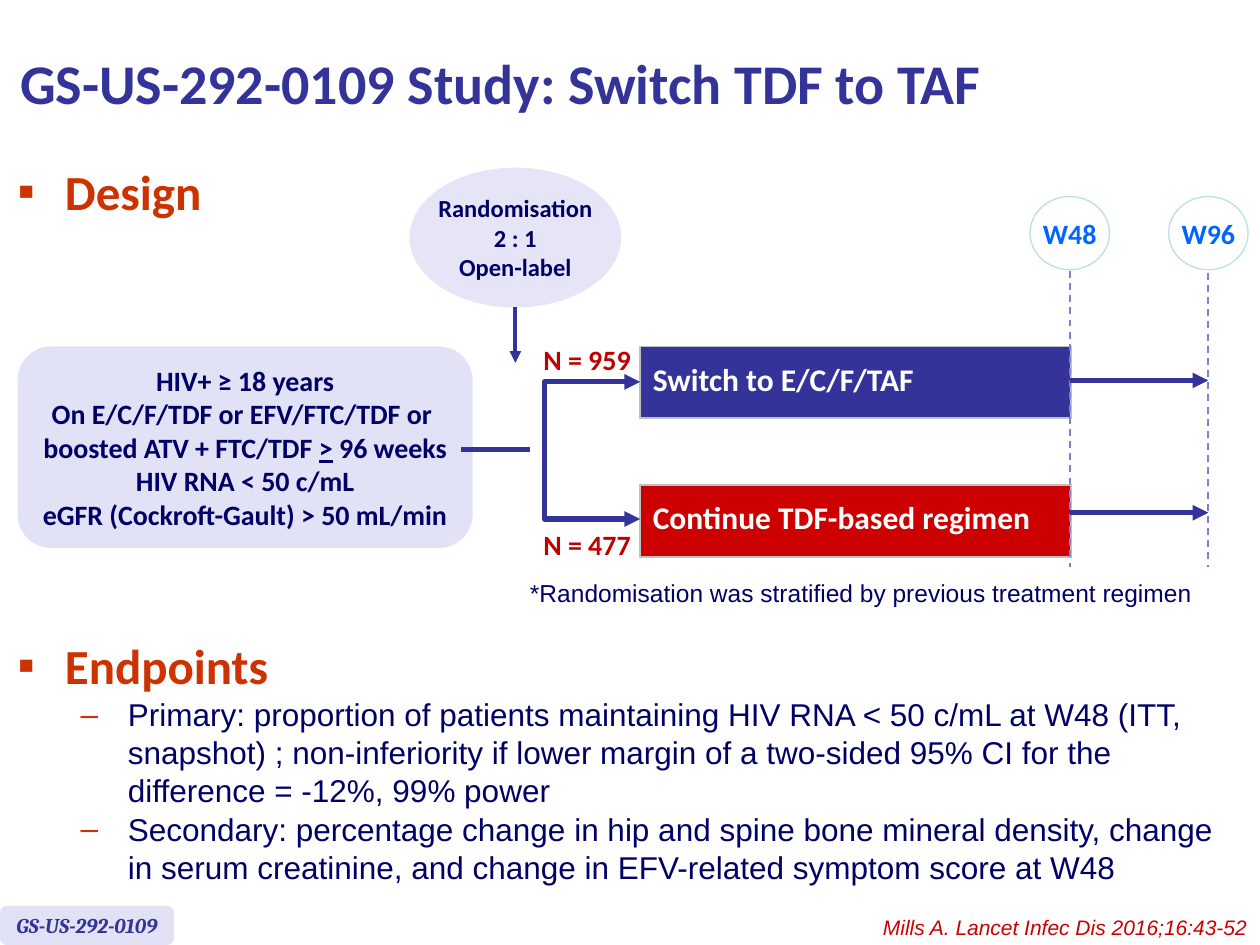
from dataclasses import dataclass
from typing import Any

import pptx
import pptx.dml.color
import pptx.enum.dml
import pptx.enum.shapes
import pptx.enum.text
import pptx.oxml
import pptx.oxml.ns
import pptx.util

Pt = pptx.util.Pt
Align = pptx.enum.text.PP_ALIGN
Anchor = pptx.enum.text.MSO_ANCHOR
Preset = pptx.enum.shapes.MSO_SHAPE
Box = tuple[float, float, float, float]
Point = tuple[float, float]


@dataclass(frozen=True)
class Theme:
    blue: str = "333399"
    navy: str = "000066"
    orange: str = "CC3300"
    red: str = "CC0000"
    dark_red: str = "C00000"
    week: str = "0066FF"
    ring: str = "BBE0E3"
    dash: str = "7E7ED4"
    border: str = "C0C0C0"
    panel: str = "E2E2F6"
    bubble: str = "E5E5F7"
    white: str = "FFFFFF"
    title: int = 32
    heading: int = 28
    body: int = 18
    label: int = 16
    note: int = 14
    footer: int = 12


THEME = Theme()


@dataclass(frozen=True)
class Style:
    size: int
    color: str
    name: str = "Calibri"
    bold: bool = True
    italic: bool = False


@dataclass(frozen=True)
class Arm:
    text: str
    top: float
    color: str
    spacing: float
    count: str
    count_top: float
    arrow_y: float


@dataclass(frozen=True)
class Visit:
    text: str
    center: float
    line_top: float


HEADING = Style(THEME.heading, THEME.orange)
ENDPOINT = Style(THEME.body, THEME.navy, "Arial", bold=False)
LABEL = Style(THEME.label, THEME.navy)

ARM_LEFT, ARM_WIDTH, ARM_HEIGHT = 365.8, 246.2, 41
ARMS = [
    Arm("Switch to E/C/F/TAF", 198, THEME.blue, 0.8, "N = 959", 192.2, 217.4),
    Arm("Continue TDF-based regimen", 277.2, THEME.red, 0.7, "N = 477", 298.1, 293),
]
VISITS = [Visit("W48", 611.3, 154.8), Visit("W96", 690.5, 149)]
ENDPOINTS = [
    "Primary: proportion of patients maintaining HIV RNA < 50 c/mL at W48 (ITT, "
    "snapshot) ; non-inferiority if lower margin of a two-sided 95% CI for the "
    "difference = -12%, 99% power",
    "Secondary: percentage change in hip and spine bone mineral density, change "
    "in serum creatinine, and change in EFV-related symptom score at W48",
]
CRITERIA = [
    "HIV+ ≥ 18 years",
    "On E/C/F/TDF or EFV/FTC/TDF or ",
    "boosted ATV + FTC/TDF |>| 96 weeks",
    "HIV RNA < 50 c/mL",
    "eGFR (Cockroft-Gault) > 50 mL/min",
]


def rgb(color: str) -> pptx.dml.color.RGBColor:
    return pptx.dml.color.RGBColor.from_string(color)


def set_all(target: Any, values: dict[str, Any]) -> None:
    for key, value in values.items():
        setattr(target, key, value)


def add_xml(parent: Any, xml: str) -> None:
    tag, rest = xml.split(" ", 1) if " " in xml else (xml.rstrip("/>"), "/>")
    parent.append(pptx.oxml.parse_xml(f"{tag} {pptx.oxml.ns.nsdecls('a')} {rest}"))


def set_font(font: Any, style: Style) -> None:
    set_all(font, {"name": style.name, "size": Pt(style.size),
                   "bold": style.bold, "italic": style.italic})
    font.color.rgb = rgb(style.color)


def write(frame: Any, lines: list[str], style: Style, align: Any = Align.CENTER,
          wrap: bool = False, anchor: Any = Anchor.MIDDLE) -> None:
    set_all(frame, {"word_wrap": wrap, "vertical_anchor": anchor,
                    "auto_size": pptx.enum.text.MSO_AUTO_SIZE.NONE})
    for index, line in enumerate(lines):
        para = frame.add_paragraph() if index else frame.paragraphs[0]
        para.alignment = align
        for part, text in enumerate(line.split("|")):
            span = para.add_run()
            span.text = text
            set_font(span.font, style)
            if part % 2:
                span.font.underline = True


def place(shape: Any, box: Box) -> None:
    set_all(shape, dict(zip(("left", "top", "width", "height"), map(Pt, box))))


def add_label(page: Any, box: Box, text: str, style: Style,
              align: Any = Align.CENTER, wrap: bool = False) -> None:
    shape = page.shapes.add_textbox(*map(Pt, box))
    write(shape.text_frame, [text], style, align, wrap, Anchor.TOP)


def add_panel(page: Any, preset: Any, box: Box, fill: str, lines: list[str],
              style: Style, outline: str | None = None) -> None:
    shape = page.shapes.add_shape(preset, *map(Pt, box))
    shape.shadow.inherit = False
    shape.fill.solid()
    shape.fill.fore_color.rgb = rgb(fill)
    if outline:
        shape.line.color.rgb = rgb(outline)
        shape.line.width = Pt(0.75)
    else:
        shape.line.fill.background()
    write(shape.text_frame, lines, style)


def set_line(shape: Any, color: str, width: float, ends: tuple[str, ...] = ()) -> None:
    shape.line.color.rgb = rgb(color)
    shape.line.width = Pt(width)
    for end in ends:
        add_xml(shape.line._get_or_add_ln(), f'<a:{end} type="triangle"/>')


def add_line(page: Any, start: Point, end: Point, color: str = THEME.blue,
             width: float = 3, arrow: bool = True, dashed: bool = False) -> None:
    kind = pptx.enum.shapes.MSO_CONNECTOR.STRAIGHT
    line = page.shapes.add_connector(kind, *map(Pt, start + end))
    set_line(line, color, width, ("tailEnd",) if arrow else ())
    if dashed:
        line.line.dash_style = pptx.enum.dml.MSO_LINE.DASH
    add_xml(line._element.spPr, "<a:effectLst/>")


def add_fork(page: Any, stem: float, tip: float, top: float, bottom: float) -> None:
    builder = page.shapes.build_freeform(Pt(tip), Pt(top))
    corners = [(stem, top), (stem, bottom), (tip, bottom)]
    builder.add_line_segments([(Pt(x), Pt(y)) for x, y in corners], close=False)
    fork = builder.convert_to_shape()
    fork.shadow.inherit = False
    fork.fill.background()
    set_line(fork, THEME.blue, 3, ("headEnd", "tailEnd"))


def add_arm(page: Any, arm: Arm) -> None:
    box = (ARM_LEFT, arm.top, ARM_WIDTH, ARM_HEIGHT)
    table = page.shapes.add_table(1, 1, *map(Pt, box)).table
    set_all(table, {"first_row": False, "horz_banding": False})
    cell = table.cell(0, 0)
    cell.vertical_anchor = Anchor.MIDDLE
    para = cell.text_frame.paragraphs[0]
    para.line_spacing = arm.spacing
    span = para.add_run()
    span.text = arm.text
    set_font(span.font, Style(THEME.body, THEME.white))
    for side in ("lnL", "lnR", "lnT", "lnB"):
        add_xml(cell._tc.get_or_add_tcPr(),
                f'<a:{side} w="{Pt(1)}"><a:solidFill><a:srgbClr val="{THEME.border}"/>'
                f"</a:solidFill></a:{side}>")
    cell.fill.solid()
    cell.fill.fore_color.rgb = rgb(arm.color)
    add_label(page, (303.1, arm.count_top, 64.8, 26.6), arm.count,
              Style(THEME.label, THEME.dark_red))


def add_list(holder: Any, box: Box, heading: str, items: list[str]) -> None:
    place(holder, box)
    write(holder.text_frame, [heading, *items], ENDPOINT, Align.LEFT, True, Anchor.TOP)
    for index, para in enumerate(holder.text_frame.paragraphs):
        set_all(para, {"level": min(index, 1), "space_before": Pt(0.8 if index else 0)})
        props = para._p.get_or_add_pPr()
        props.set("marL", str(Pt(63 if index else 27)))
        props.set("indent", str(Pt(-27)))
        add_xml(props, f'<a:buClr><a:srgbClr val="{THEME.orange}"/></a:buClr>'.replace(
            "<a:buClr>", "<a:buClr >"))
        add_xml(props, f'<a:buChar char="{"–" if index else "▪"}"/>')
    set_font(holder.text_frame.paragraphs[0].runs[0].font, HEADING)


def main() -> None:
    deck = pptx.Presentation()
    set_all(deck, {"slide_width": Pt(720), "slide_height": Pt(540)})
    page = deck.slides.add_slide(deck.slide_layouts[3])
    title, design, endpoints = page.placeholders
    place(title, (4.3, 3.6, 645, 87))
    write(title.text_frame, ["GS-US-292-0109 Study: Switch TDF to TAF"],
          Style(THEME.title, THEME.blue), Align.LEFT, True)
    add_list(design, (2.9, 88.6, 142.6, 45.4), "Design", [])
    add_list(endpoints, (2.9, 359.3, 713.5, 154.8), "Endpoints", ENDPOINTS)

    for arm in ARMS:
        add_arm(page, arm)
    add_panel(page, Preset.ROUNDED_RECTANGLE, (0, 517.7, 99.4, 22.3), THEME.panel,
              ["GS-US-292-0109"], Style(THEME.footer, THEME.blue, "Cambria", italic=True))
    add_panel(page, Preset.OVAL, (234, 95.8, 121, 79.9), THEME.bubble,
              ["Randomisation", "2 : 1", "Open-label"], Style(THEME.note, THEME.navy))
    add_panel(page, Preset.ROUNDED_RECTANGLE, (10.1, 198, 260, 115.2), THEME.panel,
              CRITERIA, LABEL)
    add_line(page, (294.5, 175.7), (294.5, 207.4), width=2.25)
    add_line(page, (263.5, 257), (303.1, 257), arrow=False)
    add_fork(page, 311, ARM_LEFT, 218.2, 296.6)

    for visit in VISITS:
        add_line(page, (visit.center, visit.line_top), (visit.center, 324), THEME.dash,
                 width=1, arrow=False, dashed=True)
        add_panel(page, Preset.OVAL, (visit.center - 22.7, 112.3, 45.4, 41.8), THEME.white,
                  [visit.text], Style(THEME.label, THEME.week), THEME.ring)
    for arm in ARMS:
        add_line(page, (VISITS[0].center, arm.arrow_y), (VISITS[1].center, arm.arrow_y))

    add_label(page, (295.2, 326.9, 393.8, 24.5),
              "*Randomisation was stratified by previous treatment regimen",
              Style(THEME.note, THEME.navy, "Arial", bold=False), wrap=True)
    add_label(page, (385.9, 519.1, 334.1, 21.6), "Mills A. Lancet Infec Dis 2016;16:43-52",
              Style(THEME.footer, THEME.red, "Arial", bold=False, italic=True),
              Align.RIGHT, True)
    deck.save("out.pptx")


if __name__ == "__main__":
    main()
